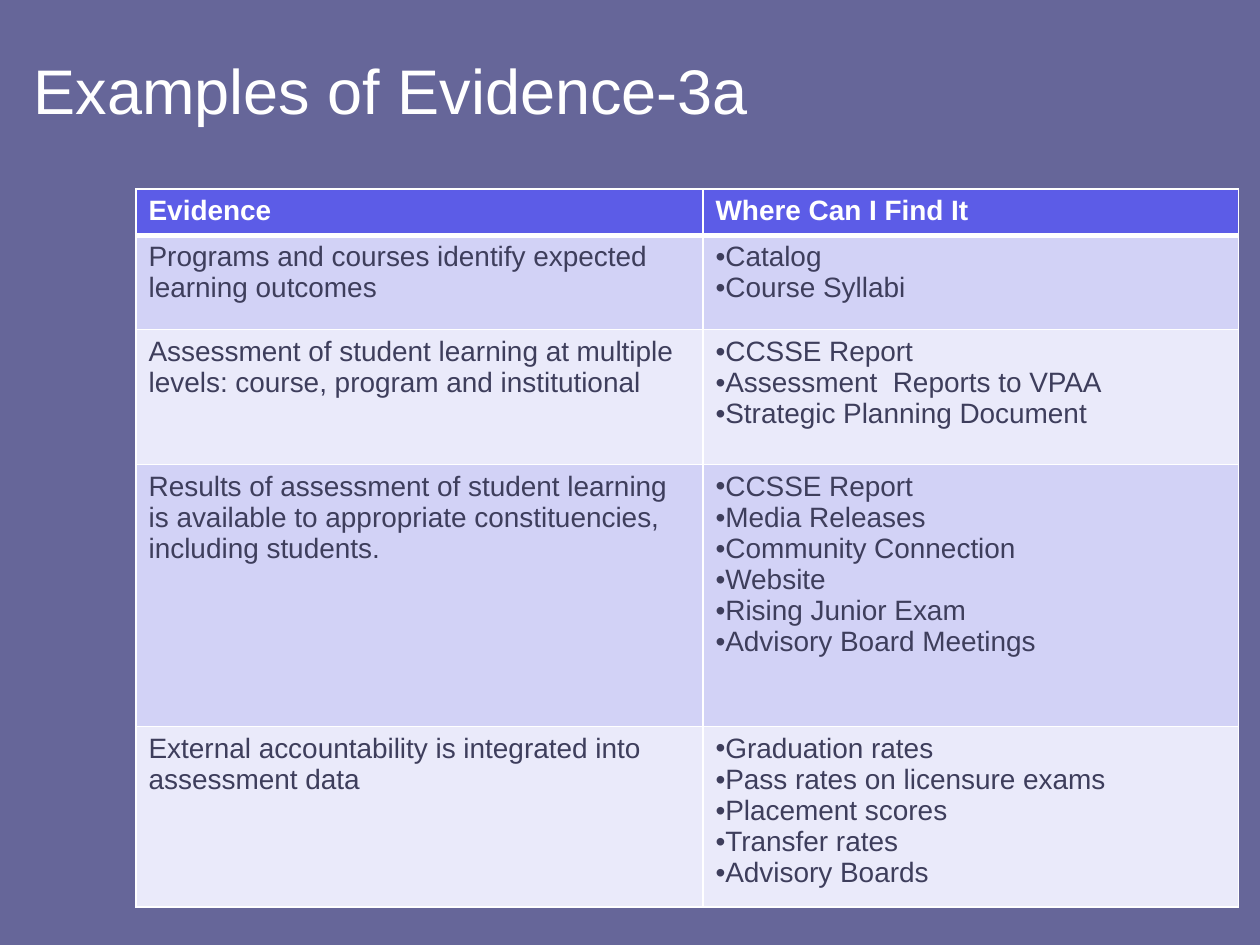
from lxml.etree import SubElement
from pptx import Presentation
from pptx.dml.color import RGBColor
from pptx.enum.text import MSO_ANCHOR, PP_ALIGN
from pptx.oxml.ns import qn
from pptx.util import Inches, Pt

COLORS = {
    "background": "666699",
    "white": "FFFFFF",
    "header": "5C5CE7",
    "odd_row": "D2D2F6",
    "even_row": "EAEAFA",
    "body": "3E3E5C",
}
TITLE_FORMAT = {"name": "Arial", "size": Pt(36), "bold": False}
HEADER_FORMAT = {"name": "Arial", "size": Pt(16), "bold": True}
BODY_FORMAT = {"name": "Arial", "size": Pt(16), "bold": False}

HEADINGS = ["Evidence", "Where Can I Find It"]
EVIDENCE = [
    ("Programs and courses identify expected learning outcomes",
     ["Catalog", "Course Syllabi"]),
    ("Assessment of student learning at multiple levels: "
     "course, program and institutional",
     ["CCSSE Report", "Assessment  Reports to VPAA",
      "Strategic Planning Document"]),
    ("Results of assessment of student learning is available to "
     "appropriate constituencies, including students.",
     ["CCSSE Report", "Media Releases", "Community Connection", "Website",
      "Rising Junior Exam", "Advisory Board Meetings"]),
    ("External accountability is integrated into assessment data",
     ["Graduation rates", "Pass rates on licensure exams",
      "Placement scores", "Transfer rates", "Advisory Boards"]),
]
COLUMN_WIDTHS = [4.5, 4.25]
ROW_HEIGHTS = [0.34, 0.75, 1.07, 2.08, 1.39]


def rgb(color):
    return RGBColor.from_string(COLORS[color])


def write_lines(frame, lines, text_format, color, bulleted=False):
    for index, line in enumerate(lines):
        paragraph = frame.add_paragraph() if index else frame.paragraphs[0]
        paragraph.text = line
        paragraph.alignment = PP_ALIGN.LEFT
        if bulleted:
            properties = paragraph._p.get_or_add_pPr()
            properties.set("marL", "0")
            properties.set("indent", "0")
            SubElement(properties, qn("a:buFont"), typeface="Arial")
            SubElement(properties, qn("a:buChar"), char="•")
        font = paragraph.runs[0].font
        for attribute, value in text_format.items():
            setattr(font, attribute, value)
        font.color.rgb = rgb(color)


def add_borders(cell, top, bottom):
    properties = cell._tc.get_or_add_tcPr()
    for edge, points in {"L": 1, "R": 1, "T": top, "B": bottom}.items():
        border = SubElement(properties, qn(f"a:ln{edge}"), w=str(Pt(points)))
        fill = SubElement(border, qn("a:solidFill"))
        SubElement(fill, qn("a:srgbClr"), val=COLORS["white"])


def add_title(slide, left, top, width, height):
    title = slide.shapes.add_textbox(left, top, width, height)
    frame = title.text_frame
    frame.word_wrap = True
    frame.vertical_anchor = MSO_ANCHOR.MIDDLE
    write_lines(frame, ["Examples of Evidence-3a"], TITLE_FORMAT, "white")


def add_evidence_table(slide, left, top, width, height):
    rows = [([HEADINGS[0]], [HEADINGS[1]])]
    rows += [([evidence], sources) for evidence, sources in EVIDENCE]
    table = slide.shapes.add_table(
        len(rows), len(HEADINGS), left, top, width, height).table
    for column, share in zip(table.columns, COLUMN_WIDTHS):
        column.width = int(width * share / sum(COLUMN_WIDTHS))
    for row, share in zip(table.rows, ROW_HEIGHTS):
        row.height = int(height * share / sum(ROW_HEIGHTS))

    for row_index, row in enumerate(rows):
        is_header = row_index == 0
        if is_header:
            fill, text_format, color = "header", HEADER_FORMAT, "white"
        else:
            fill = "odd_row" if row_index % 2 else "even_row"
            text_format, color = BODY_FORMAT, "body"
        for column_index, lines in enumerate(row):
            cell = table.cell(row_index, column_index)
            add_borders(cell, top=3 if row_index == 1 else 1,
                        bottom=3 if is_header else 1)
            cell.fill.solid()
            cell.fill.fore_color.rgb = rgb(fill)
            write_lines(cell.text_frame, lines, text_format, color,
                        bulleted=column_index == 1 and not is_header)


def main():
    presentation = Presentation()
    presentation.slide_width = Inches(10)
    presentation.slide_height = Inches(7.5)
    slide = presentation.slides.add_slide(presentation.slide_layouts[6])
    slide.background.fill.solid()
    slide.background.fill.fore_color.rgb = rgb("background")
    add_title(slide, Inches(0.17), Inches(0.25), Inches(9.67), Inches(0.92))
    add_evidence_table(slide, Inches(1.08), Inches(1.5),
                       Inches(sum(COLUMN_WIDTHS)), Inches(sum(ROW_HEIGHTS)))
    presentation.save("out.pptx")


if __name__ == "__main__":
    main()
